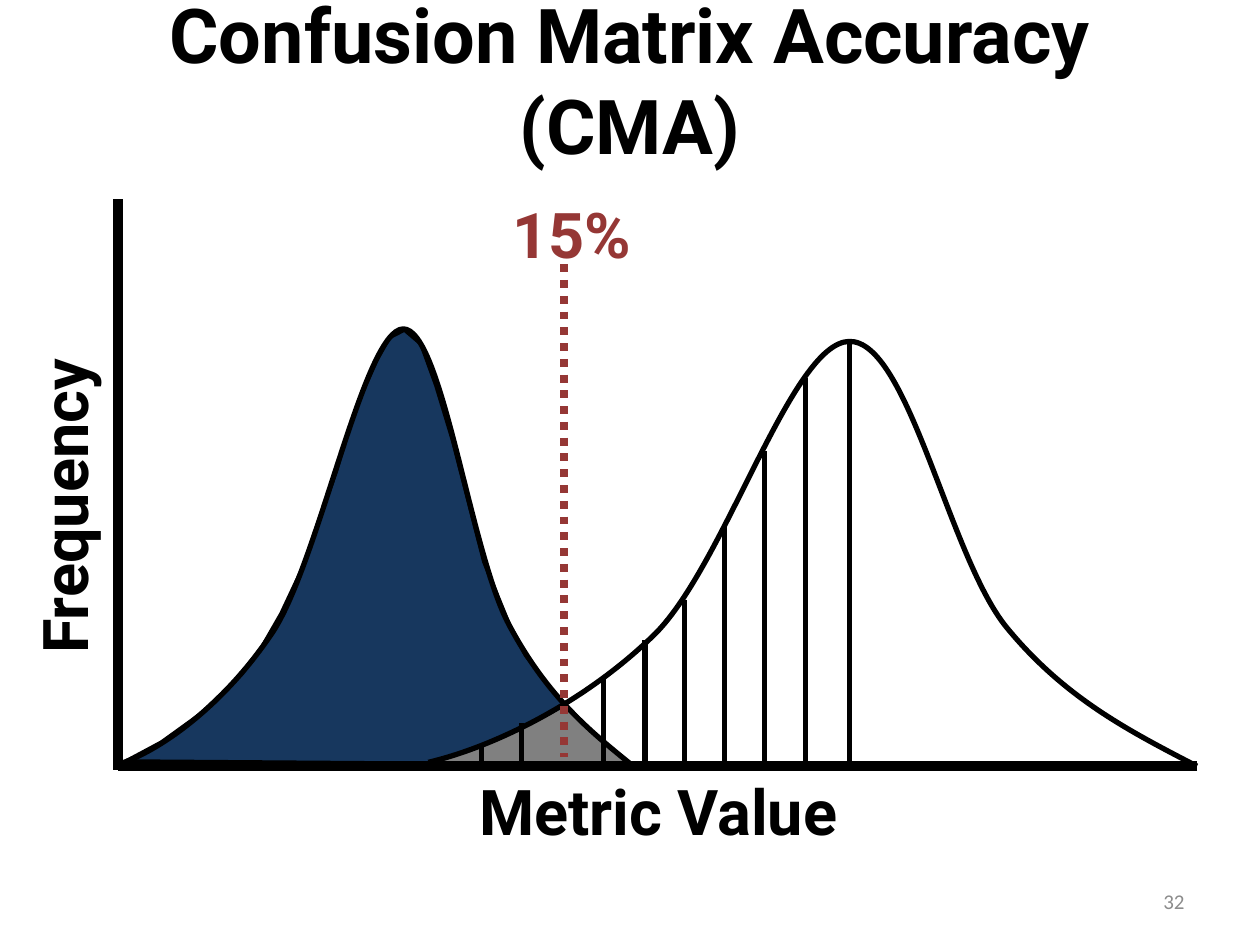
from pptx import Presentation
from pptx.dml.color import RGBColor
from pptx.enum.dml import MSO_LINE
from pptx.enum.shapes import MSO_CONNECTOR
from pptx.enum.text import MSO_ANCHOR, PP_ALIGN
from pptx.oxml.ns import qn
from pptx.util import Pt
from lxml.etree import SubElement

BLACK = RGBColor(0x00, 0x00, 0x00)
NAVY = RGBColor(0x17, 0x37, 0x5E)
GRAY = RGBColor(0x80, 0x80, 0x80)
RED = RGBColor(0x95, 0x37, 0x35)
PALE_GRAY = RGBColor(0x8C, 0x8C, 0x8C)

NAVY_AREA = [
    (72, 434.9), (361.4, 437), (353.5, 431.3), (335.5, 415.4), (317.5, 396.7),
    (300.2, 374.4), (290.9, 356.4), (276.5, 321.1), (267.1, 284.4), (258.5, 251.3),
    (249.1, 220.3), (240.5, 196.6), (231.1, 188.6), (222.5, 193), (215.3, 205.9),
    (206.6, 225.4), (199.4, 245.5), (192.2, 269.3), (182.2, 297.4), (172.8, 324.7),
    (160.6, 350.6), (149.8, 369.4), (138.2, 385.2), (115.2, 407.5), (92.2, 424.1),
]
OVERLAP_AREA = [
    (249.8, 434.9), (360, 434.9), (347, 425.5), (340.6, 419), (331.2, 410.4),
    (324.7, 403.2), (313.2, 409), (304.6, 413.3), (293.8, 419), (275.8, 427),
    (258.5, 432.7),
]
LEFT_BELL = [
    (69.1, 436.3), (93.6, 427.7), (128.9, 401.8), (156.2, 360.7),
    (182.9, 319), (208.1, 188.6), (230.4, 187.9),
    (252.7, 187.9), (268.6, 315.4), (290.9, 357.1),
    (313.2, 398.9), (337.7, 418.3), (363.6, 439.2),
]
RIGHT_BELL = [
    (244.8, 435.6), (281.5, 427), (334.1, 401.8), (374.4, 362.2),
    (414.7, 321.8), (452.2, 195.8), (485.3, 195.1),
    (519.1, 194.4), (542.2, 318.2), (575.3, 358.6),
    (608.4, 398.9), (645.1, 417.6), (684, 437.8),
]
HATCH_TOPS = [
    (275, 427), (298.1, 413.3), (344.9, 387.4), (368.6, 365.8), (391, 342.7),
    (414, 300.2), (437, 257.8), (460.1, 216), (485.3, 195.1),
]
HATCH_BOTTOM = 439.5


def add_outline(slide, points, closed):
    """Add a freeform through the points, without shadow, fill or line."""
    vertices = [(Pt(x), Pt(y)) for x, y in points]
    builder = slide.shapes.build_freeform(*vertices[0], scale=1.0)
    builder.add_line_segments(vertices[1:], close=closed)
    outline = builder.convert_to_shape()
    outline.shadow.inherit = False
    outline.fill.background()
    outline.line.fill.background()
    return outline


def set_line(line, width, color=BLACK):
    """Set the colour and width of a line."""
    line.color.rgb = color
    line.width = Pt(width)


def add_area(slide, points, fill):
    """Add a filled polygon."""
    area = add_outline(slide, points, closed=True)
    area.fill.solid()
    area.fill.fore_color.rgb = fill
    return area


def add_curve(slide, controls):
    """Add an open chain of cubic Bezier segments."""
    curve = add_outline(slide, controls, closed=False)
    set_line(curve.line, 3)
    route = next(curve.element.iter(qn("a:path")))
    steps = route.findall(qn("a:lnTo"))
    for first in range(0, len(steps), 3):
        bend = SubElement(route, qn("a:cubicBezTo"))
        for step in steps[first:first + 3]:
            bend.append(step[0])
            route.remove(step)


def add_rule(slide, start, end, width, color=BLACK, dash=None):
    """Draw a straight line without a shadow."""
    rule = slide.shapes.add_connector(
        MSO_CONNECTOR.STRAIGHT, *(Pt(v) for v in (*start, *end)))
    set_line(rule.line, width, color)
    if dash is not None:
        rule.line.dash_style = dash
    SubElement(rule.element.spPr, qn("a:effectLst"))


def add_label(slide, box, text, size, color=BLACK, font="Roboto", bold=True,
              align=PP_ALIGN.CENTER, anchor=MSO_ANCHOR.TOP, rotation=0):
    """Add a one-paragraph wrapped text box."""
    label = slide.shapes.add_textbox(*(Pt(v) for v in box))
    label.rotation = rotation
    frame = label.text_frame
    frame.word_wrap = True
    frame.vertical_anchor = anchor
    paragraph = frame.paragraphs[0]
    paragraph.alignment = align
    run = paragraph.add_run()
    run.text = text
    run.font.name = font
    run.font.size = Pt(size)
    run.font.bold = bold
    run.font.color.rgb = color


def main():
    """Build the slide and save it."""
    deck = Presentation()
    deck.slide_width, deck.slide_height = Pt(720), Pt(540)
    slide = deck.slides.add_slide(deck.slide_layouts[6])

    left_area = add_area(slide, NAVY_AREA, NAVY)
    set_line(left_area.line, 2)
    add_area(slide, OVERLAP_AREA, GRAY)
    add_label(slide, (36, 0, 648, 90), "Confusion Matrix Accuracy (CMA)", 43.2,
              anchor=MSO_ANCHOR.MIDDLE)
    add_rule(slide, (67.5, 113.8), (67.5, 440), 6)
    add_rule(slide, (684, 437.8), (67.5, 437.8), 6)
    for bell in (LEFT_BELL, RIGHT_BELL):
        add_curve(slide, bell)
    for x, top in HATCH_TOPS:
        add_rule(slide, (x, top), (x, HATCH_BOTTOM), 3)
    add_label(slide, (-118.1, 263.5, 309.6, 51.8), "Frequency", 36, rotation=270)
    add_label(slide, (68.7, 437.8, 614.9, 51), "Metric Value", 36)
    add_label(slide, (281.7, 108, 90, 51), "15%", 36, color=RED)
    add_rule(slide, (322.4, 151), (322.4, 432.7), 4.5, RED, MSO_LINE.ROUND_DOT)
    add_label(slide, (516.2, 500.4, 167.8, 28.8), "32", 12, color=PALE_GRAY,
              font="Calibri", bold=False, align=PP_ALIGN.RIGHT,
              anchor=MSO_ANCHOR.MIDDLE)
    deck.save("out.pptx")


if __name__ == "__main__":
    main()
